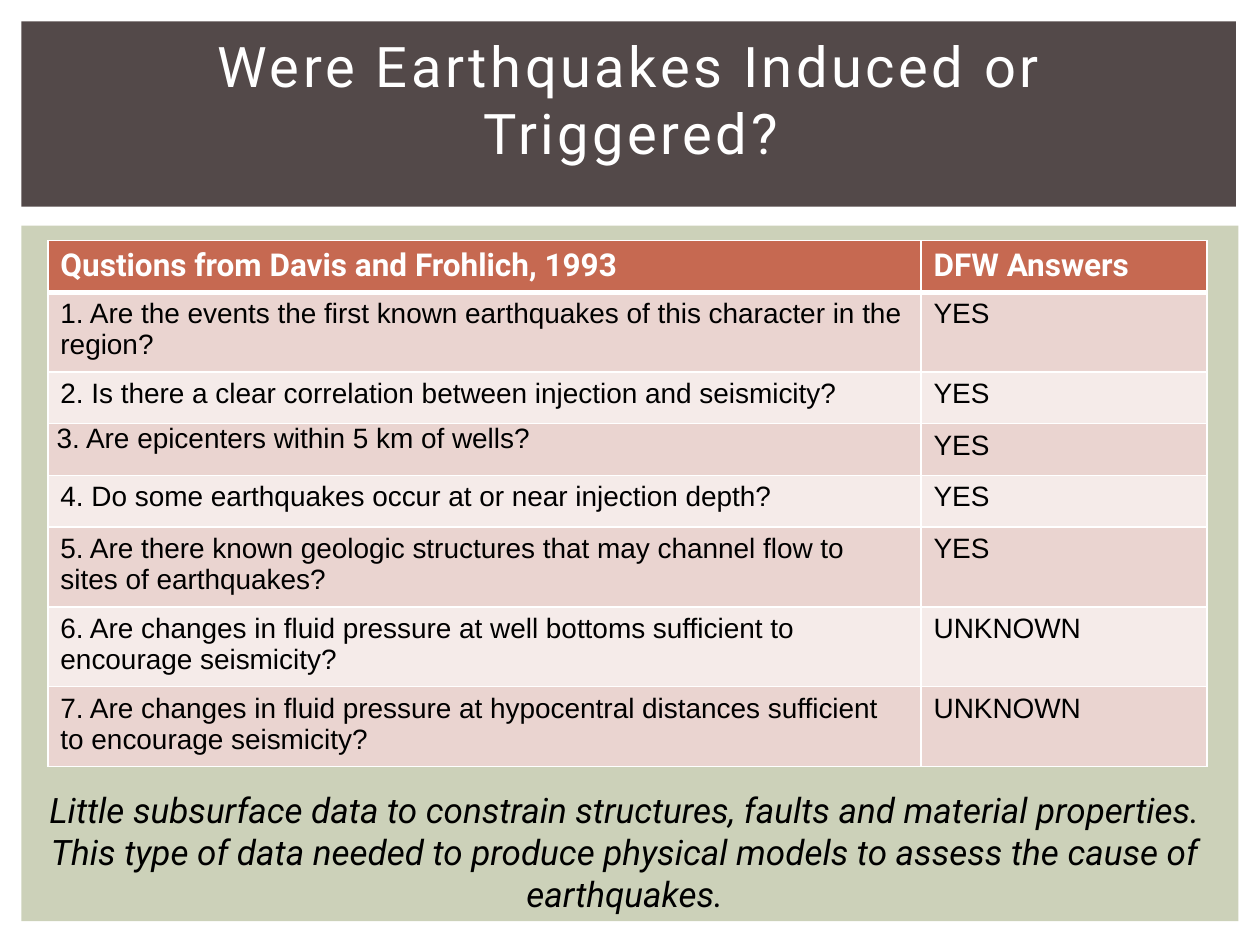
from dataclasses import dataclass
from typing import NamedTuple

from lxml import etree
from pptx import Presentation
from pptx.dml.color import RGBColor
from pptx.enum.shapes import MSO_SHAPE
from pptx.enum.text import MSO_ANCHOR, PP_ALIGN
from pptx.oxml.ns import qn
from pptx.util import Emu, Inches, Pt

RECTANGLE = MSO_SHAPE.RECTANGLE
CENTER, LEFT = PP_ALIGN.CENTER, PP_ALIGN.LEFT
TOP, MIDDLE = MSO_ANCHOR.TOP, MSO_ANCHOR.MIDDLE

# The slide is a grid of 100 columns by 75 rows of square cells
COLUMNS, ROWS = 100, 75
SLIDE_WIDTH, SLIDE_HEIGHT = Inches(10), Inches(7.5)
CELL = SLIDE_WIDTH // COLUMNS


class Area(NamedTuple):
    """Position and size in grid cells."""
    column: float
    row: float
    width: float
    height: float

    def emu(self) -> list[Emu]:
        return [Emu(round(length * CELL)) for length in self]


class Style(NamedTuple):
    font: str
    size: float
    color: str
    bold: bool = False
    italic: bool = False
    spacing: float = 0


class Question(NamedTuple):
    text: str
    answer: str
    hanging: bool = False


@dataclass(frozen=True)
class Theme:
    panel: str = "CCD1B9"
    banner: str = "534949"
    header_fill: str = "C66951"
    bands: tuple[str, str] = ("EAD4D0", "F5EBE9")
    border: str = "FFFFFF"
    thin: float = 1
    thick: float = 3
    title: Style = Style("Roboto", 32, "FFFFFF", spacing=2)
    header: Style = Style("Roboto", 18, "FFFFFF", bold=True)
    body: Style = Style("Arial", 16, "000000")
    remark: Style = Style("Roboto", 20, "000000", italic=True)


THEME = Theme()

BANNER = Area(1.7, 1.7, 96.4, 14.7)
PANEL = Area(1.7, 17.9, 96.6, 55.2)
TITLE = Area(4.2, 3.9, 91.7, 7.9)
TABLE = Area(3.8, 19.1, 92, 32.8)
REMARK = Area(2.6, 62.1, 94, 11.1)
TABLE_COLUMNS = (69.3, 22.7)

HEADINGS = ("Qustions from Davis and Frohlich, 1993", "DFW Answers")
QUESTIONS = (
    Question("1. Are the events the first known earthquakes of this character "
             "in the region?", "YES"),
    Question("2. Is there a clear correlation between injection and seismicity?", "YES"),
    Question("3. Are epicenters within 5 km of wells?", "YES", hanging=True),
    Question("4. Do some earthquakes occur at or near injection depth?", "YES"),
    Question("5. Are there known geologic structures that may channel flow to "
             "sites of earthquakes?", "YES"),
    Question("6. Are changes in fluid pressure at well bottoms sufficient to "
             "encourage seismicity?", "UNKNOWN"),
    Question("7. Are changes in fluid pressure at hypocentral distances "
             "sufficient to encourage seismicity?", "UNKNOWN"),
)


def write(frame, text: str, style: Style, align=LEFT) -> None:
    frame.text = text
    paragraph = frame.paragraphs[0]
    paragraph.alignment = align
    run = paragraph.runs[0]
    run.font.name, run.font.size = style.font, Pt(style.size)
    run.font.bold, run.font.italic = style.bold, style.italic
    run.font.color.rgb = RGBColor.from_string(style.color)
    if style.spacing:
        run.font._element.set("spc", str(round(style.spacing * 100)))


def add_block(slide, area: Area, color: str) -> None:
    block = slide.shapes.add_shape(RECTANGLE, *area.emu())
    block.shadow.inherit = False
    block.fill.solid()
    block.fill.fore_color.rgb = RGBColor.from_string(color)
    block.line.fill.background()


def add_text(slide, area: Area, text: str, style: Style, anchor=TOP) -> None:
    frame = slide.shapes.add_textbox(*area.emu()).text_frame
    frame.word_wrap = True
    frame.vertical_anchor = anchor
    write(frame, text, style, CENTER)


def set_borders(cell, top: float, bottom: float) -> None:
    properties = cell._tc.get_or_add_tcPr()
    widths = {"lnL": THEME.thin, "lnR": THEME.thin, "lnT": top, "lnB": bottom}
    for tag, width in widths.items():
        line = etree.SubElement(properties, qn(f"a:{tag}"), w=str(Pt(width)))
        fill = etree.SubElement(line, qn("a:solidFill"))
        etree.SubElement(fill, qn("a:srgbClr"), val=THEME.border)


def fill_cell(cell, text: str, style: Style, color: str,
              top: float, bottom: float) -> None:
    set_borders(cell, top, bottom)
    cell.fill.solid()
    cell.fill.fore_color.rgb = RGBColor.from_string(color)
    write(cell.text_frame, text, style)


def hang(cell) -> None:
    """Hanging indent with tight margins."""
    cell.margin_left = cell.margin_right = Inches(0.07)
    cell.margin_top = cell.margin_bottom = 0
    properties = cell.text_frame.paragraphs[0]._p.get_or_add_pPr()
    properties.set("marL", str(Inches(0.5)))
    properties.set("indent", str(Inches(-0.5)))


def add_question_table(slide) -> None:
    table = slide.shapes.add_table(
        len(QUESTIONS) + 1, len(HEADINGS), *TABLE.emu()).table
    for column, width in zip(table.columns, TABLE_COLUMNS):
        column.width = Emu(round(width * CELL))

    for index, heading in enumerate(HEADINGS):
        fill_cell(table.cell(0, index), heading, THEME.header,
                  THEME.header_fill, THEME.thin, THEME.thick)

    for row, question in enumerate(QUESTIONS, start=1):
        band = THEME.bands[(row - 1) % 2]
        top = THEME.thick if row == 1 else THEME.thin
        for index, text in enumerate((question.text, question.answer)):
            fill_cell(table.cell(row, index), text, THEME.body, band,
                      top, THEME.thin)
        if question.hanging:
            hang(table.cell(row, 0))


def main() -> None:
    presentation = Presentation()
    presentation.slide_width = SLIDE_WIDTH
    presentation.slide_height = SLIDE_HEIGHT
    slide = presentation.slides.add_slide(presentation.slide_layouts[6])

    # Background blocks
    add_block(slide, PANEL, THEME.panel)
    add_block(slide, BANNER, THEME.banner)

    # Title, table and closing remark
    add_text(slide, TITLE, "Were Earthquakes Induced or Triggered?",
             THEME.title, MIDDLE)
    add_question_table(slide)
    add_text(slide, REMARK,
             "Little subsurface data to constrain structures, faults and "
             "material properties. This type of data needed to produce "
             "physical models to assess the cause of earthquakes.",
             THEME.remark)

    presentation.save("out.pptx")


if __name__ == "__main__":
    main()
